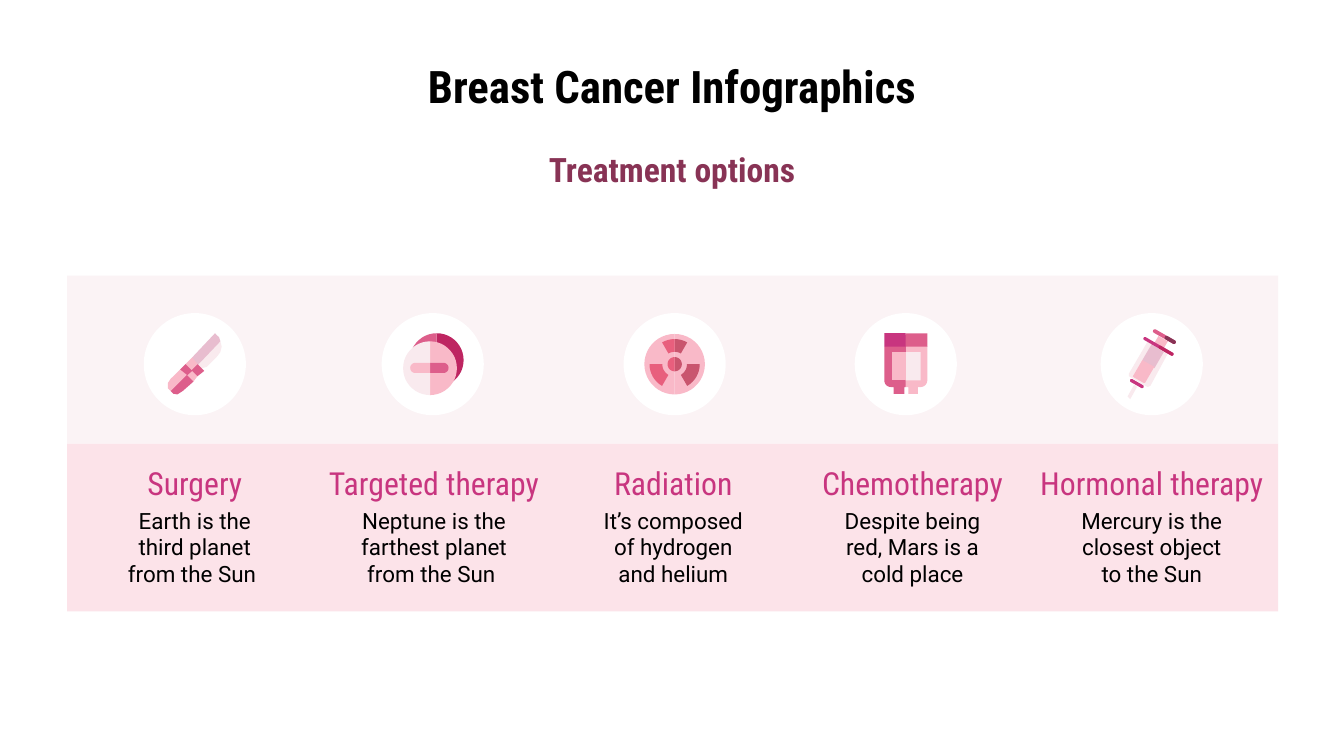
"""Build the breast cancer treatment options slide."""
import math

from lxml import etree
from pptx import Presentation
from pptx import util as u
from pptx.dml.color import RGBColor
from pptx.enum import shapes, text
from pptx.oxml import ns

BLACK = RGBColor(0x00, 0x00, 0x00)
WHITE = RGBColor(0xFF, 0xFF, 0xFF)
BLUSH = RGBColor(0xF9, 0xEA, 0xEE)
PINK = RGBColor(0xF9, 0xB9, 0xC8)
LILAC = RGBColor(0xE8, 0xBD, 0xCF)
ROSE = RGBColor(0xDD, 0x5E, 0x8B)
MAGENTA = RGBColor(0xC8, 0x35, 0x7F)
CRIMSON = RGBColor(0xBE, 0x25, 0x61)
PLUM = RGBColor(0x88, 0x33, 0x55)
CORAL = RGBColor(0xE8, 0x5F, 0x7D)
BRICK = RGBColor(0xC9, 0x55, 0x6E)

COLS, ROWS = 100, 56.25
HEAD_FONT, BODY_FONT = "Roboto Condensed", "Roboto"
PITCH = 17.8
DISC = 7.6


def cell(n):
    """Return the length of n grid cells."""
    return u.Inches(n / 10)


def paint(sp, color, alpha=None):
    """Give a shape a flat fill without line or shadow."""
    sp.shadow.inherit = False
    sp.line.fill.background()
    sp.fill.solid()
    sp.fill.fore_color.rgb = color
    if alpha is not None:
        clr = sp.fill._xPr.find(".//" + ns.qn("a:srgbClr"))
        etree.SubElement(clr, ns.qn("a:alpha")).set("val", str(alpha * 1000))


def add_preset(s, kind, box, color, alpha=None):
    """Add a painted preset shape in a grid box."""
    paint(s.shapes.add_shape(kind, *map(cell, box)), color, alpha)


def add_text(s, words, box, size=12, font=BODY_FONT, color=BLACK, bold=False,
             anchor=text.MSO_ANCHOR.MIDDLE, wrap=True):
    """Add one centred paragraph in a grid box."""
    tf = s.shapes.add_textbox(*map(cell, box)).text_frame
    tf.word_wrap = wrap
    tf.vertical_anchor = anchor
    tf.margin_left = tf.margin_right = tf.margin_top = tf.margin_bottom = cell(1)
    p = tf.paragraphs[0]
    p.alignment = text.PP_ALIGN.CENTER
    r = p.add_run()
    r.text = words
    r.font.size, r.font.name, r.font.bold = u.Pt(size), font, bold
    r.font.color.rgb = color


def arc(x, y, radius, start, end):
    """Return points along a circle, with angles in degrees."""
    steps = max(4, round(abs(end - start) / 8))
    angles = [math.radians(start + (end - start) * i / steps) for i in range(steps + 1)]
    return [(x + radius * math.cos(a), y + radius * math.sin(a)) for a in angles]


def half(x, y, radius, side):
    """Return the left (-1) or right (1) half of a disc."""
    return arc(x, y, radius, -90, -90 + 180 * side)


def blade(start, end):
    """Return a piece of the radiation ring."""
    return arc(0, 0, 18.7, start, end) + arc(0, 0, 9.2, end, start)


def capsule(x1, y1, x2, y2, width):
    """Return a bar with round ends."""
    a = math.degrees(math.atan2(y2 - y1, x2 - x1))
    return (arc(x1, y1, width / 2, a + 90, a + 270)
            + arc(x2, y2, width / 2, a - 90, a + 90))


def scalpel():
    """Return the coloured outlines of the scalpel."""
    return [
        (BLUSH, [(19, -17), (-4, -1), (5, 3), (9, 2), (16, -5), (19, -9), (20, -13)]),
        (LILAC, [(15, -23), (-2, -5), (-1, 4), (19, -17), (18, -20), (16, -22)]),
        (ROSE, [(2, 0), (-10, 5), (2, 9), (7, 5)]),
        (PINK, [(-2, -5), (-7, 0), (-6, 8), (2, 0)]),
        (PINK, [(-2, 5), (-14, 8), (-1, 13), (2, 9)]),
        (ROSE, [(-7, 0), (-11, 4), (-10, 12), (-2, 5)]),
        (ROSE, [(-6, 8), (-15, 12), (-18, 20), (-16, 22), (-13, 22.5), (-9, 20), (-1, 13)]),
        (PINK, [(-11, 4), (-18, 11), (-20, 14), (-20, 18), (-18, 20), (-6, 8)]),
    ]


def pills():
    """Return the coloured outlines of the two pills."""
    return [
        (CRIMSON, half(3, -3, 20, 1)), (ROSE, half(3, -3, 20, -1)),
        (PINK, half(-2, 3, 20, 1)), (BLUSH, half(-2, 3, 20, -1)),
        (ROSE, [(-2, -1)] + half(8, 2.75, 3.75, 1) + [(-2, 6.5)]),
        (PINK, [(-2, -1)] + half(-13, 2.75, 3.75, -1) + [(-2, 6.5)]),
    ]


def trefoil():
    """Return the coloured outlines of the radiation sign."""
    return [
        (PINK, half(0, 0, 22.5, 1)), (PINK, half(0, 0, 22.5, -1)),
        (BRICK, half(0, 0, 5.3, 1)), (CORAL, half(0, 0, 5.3, -1)),
        (BRICK, blade(-90, -60)), (CORAL, blade(-120, -90)),
        (CORAL, blade(120, 180)), (BRICK, blade(0, 60)),
    ]


def drip_bag():
    """Return the coloured outlines of the drip bag."""
    return [
        (ROSE, [(0, -23), (-5, -8), (16, -13), (16, -23)]),
        (PINK, [(0, -13), (-10, 1), (0, 17), (2, 17), (2, 22), (9, 22), (9, 17)]
         + arc(11, 12, 5, 90, 0) + [(16, -13)]),
        (MAGENTA, [(-16, -23), (-16, -13), (0, -7), (0, -23)]),
        (ROSE, [(-16, -13)] + arc(-11, 12, 5, 180, 90)
         + [(-9, 17), (-9, 22), (-1, 22), (-1, 17), (0, 17), (0, -13)]),
        (BLUSH, [(0, -9), (-5, 1), (0, 12), (11, 12), (11, -9)]),
        (PINK, [(-10, -9), (-10, 12), (0, 12), (0, -9)]),
    ]


def syringe():
    """Return the coloured outlines of the syringe."""
    return [
        (MAGENTA, capsule(-15, 12.2, -7.2, 16.6, 2.4)),
        (BLUSH, [(-11, 17), (-13, 15), (-18, 24), (-16, 26)]),
        (BLUSH, [(12, -8), (-3, -17), (-17, 7), (-17, 9), (-5, 16), (-3, 17), (-1, 16)]),
        (LILAC, [(9, -9), (0, -15), (-7, -3), (-6, -2), (1, 2), (2, 3)]),
        (ROSE, capsule(2.3, -24.6, 16.5, -16.4, 2.8)),
        (PINK, [(12, -17), (5, -21), (2, -16), (9, -12)]),
        (MAGENTA, capsule(-5, -19, 15, -7.5, 2.4)),
        (PINK, [(2, 2), (-7, -3), (-14, 9), (-13, 10), (-6, 14), (-5, 14)]),
        (CRIMSON, capsule(6.2, -12.6, 15, -7.5, 2.4)),
        (PLUM, capsule(11, -19.6, 16.5, -16.4, 2.8)),
    ]


def add_icon(s, parts, x, y):
    """Draw a white disc with an icon, both centred on a grid point."""
    add_preset(s, shapes.MSO_SHAPE.OVAL, (x - DISC / 2, y - DISC / 2, DISC, DISC), WHITE)
    for color, pts in parts:
        (x0, y0), *rest = [(px * 100, py * 100) for px, py in pts]
        fb = s.shapes.build_freeform(x0, y0, scale=cell(1) / 1000)
        fb.add_line_segments(rest, close=True)
        paint(fb.convert_to_shape(cell(x), cell(y)), color)


def add_header(s, box):
    """Add the title and the subtitle in a grid box."""
    left, top, width, _ = box
    add_text(s, "Breast Cancer Infographics", (left, top, width, 6.3), size=24,
             font=HEAD_FONT, bold=True, anchor=text.MSO_ANCHOR.TOP)
    add_text(s, "Treatment options", (left + width / 2 - 18.75, top + 7.2, 37.5, 4),
             size=18, font=HEAD_FONT, color=PLUM, bold=True)


def add_options(s, box, options):
    """Add the two bands and one column for each option in a grid box."""
    left, top, width, height = box
    band = height / 2
    rect = shapes.MSO_SHAPE.RECTANGLE
    add_preset(s, rect, (left, top, width, band), BLUSH, 54)
    add_preset(s, rect, (left, top + band, width, band), PINK, 39)
    for i, (name, words, name_width, icon, shift) in enumerate(options):
        x = left + 9.5 + i * PITCH
        add_icon(s, icon(), x + shift, top + 6.6)
        add_text(s, words, (x - 6.9, top + 17.3, 13.8, 5.8))
        add_text(s, name, (x - name_width / 2, top + 13.9, name_width, 3.1), size=17,
                 font=HEAD_FONT, color=MAGENTA, wrap=False)


def main():
    """Build and save the slide."""
    prs = Presentation()
    prs.slide_width, prs.slide_height = cell(COLS), cell(ROWS)
    s = prs.slides.add_slide(prs.slide_layouts[6])
    add_header(s, (2, 3.4, 96, 11.2))
    add_options(s, (5, 20.5, 90.1, 25), [
        ("Surgery", "Earth is the third planet from the Sun ", 13.8, scalpel, 0),
        ("Targeted therapy", "Neptune is the farthest planet from the Sun ", 18.6, pills, -0.1),
        ("Radiation", "It’s composed of hydrogen and helium", 13.8, trefoil, 0.1),
        ("Chemotherapy", "Despite being red, Mars is a cold place", 18.6, drip_bag, -0.5),
        ("Hormonal therapy", "Mercury is the closest object to the Sun", 18.6, syringe, 0),
    ])
    prs.save("out.pptx")


if __name__ == "__main__":
    main()
